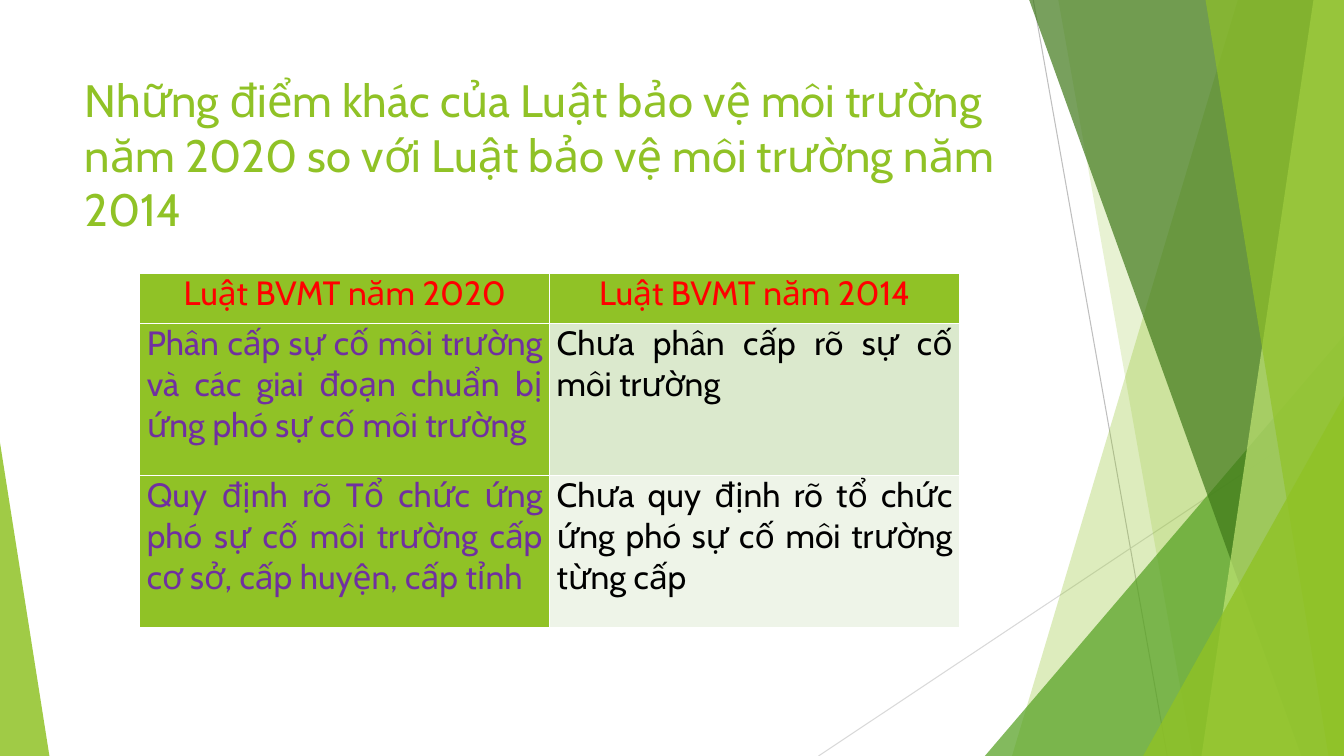
from dataclasses import dataclass

from lxml import etree
from pptx import Presentation
from pptx import util as u
from pptx.dml.color import RGBColor
from pptx.enum import shapes, text
from pptx.oxml import ns

FONT = "Cabin"
GREEN = "90C226"
PURPLE = "7030A0"
RED = "FF0000"
BLACK = "000000"

deck = Presentation()
deck.slide_width, deck.slide_height = u.Inches(13.333), u.Inches(7.5)


@dataclass
class Ray:
    """Thin line between two points, in percent of the slide."""
    start: tuple[float, float]
    end: tuple[float, float]
    colour: str


@dataclass
class Panel:
    """Full-height pane from a slanted left edge to the right slide edge."""
    top: float
    foot: float
    colour: str
    opacity: int


@dataclass
class Wedge:
    """Right triangle standing on the bottom slide edge."""
    left: float
    top: float
    width: float
    apex: float
    colour: str
    opacity: int


@dataclass
class Entry:
    wording: str
    colour: str
    fill: str
    align: text.PP_ALIGN = text.PP_ALIGN.JUSTIFY


def across(percent: float) -> int:
    return round(deck.slide_width * percent / 100)


def down(percent: float) -> int:
    return round(deck.slide_height * percent / 100)


def paint(colour_format, colour: str) -> None:
    colour_format.rgb = RGBColor.from_string(colour)


def tint(shape, colour: str, opacity: int) -> None:
    """Fill a shape with a see-through colour, without line or shadow."""
    shape.shadow.inherit = False
    shape.line.fill.background()
    shape.fill.solid()
    paint(shape.fill.fore_color, colour)
    srgb = shape.fill._xPr.find(".//" + ns.qn("a:srgbClr"))
    etree.SubElement(srgb, ns.qn("a:alpha"), val=str(opacity * 1000))


def draw_ray(slide, ray: Ray) -> None:
    (x1, y1), (x2, y2) = ray.start, ray.end
    line = slide.shapes.add_connector(
        shapes.MSO_CONNECTOR.STRAIGHT, across(x1), down(y1), across(x2), down(y2))
    line.line.width = u.Pt(0.75)
    paint(line.line.color, ray.colour)
    etree.SubElement(line._element.spPr, ns.qn("a:effectLst"))


def draw_panel(slide, panel: Panel) -> None:
    outline = slide.shapes.build_freeform(across(panel.top), 0)
    outline.add_line_segments([
        (across(100), 0), (across(100), down(100)), (across(panel.foot), down(100))])
    tint(outline.convert_to_shape(), panel.colour, panel.opacity)


def draw_wedge(slide, wedge: Wedge) -> None:
    triangle = slide.shapes.add_shape(
        shapes.MSO_SHAPE.ISOSCELES_TRIANGLE, across(wedge.left), down(wedge.top),
        across(wedge.width), down(100 - wedge.top))
    triangle.adjustments[0] = wedge.apex
    tint(triangle, wedge.colour, wedge.opacity)


def write(paragraph, wording: str, size: float, colour: str) -> None:
    run = paragraph.add_run()
    run.text = wording
    run.font.name, run.font.size, run.font.bold = FONT, u.Pt(size), False
    paint(run.font.color, colour)


def write_title(title, wording: str) -> None:
    title.left, title.top = across(5.55), down(8.93)
    title.width, title.height = across(70.5), down(19.2)
    frame = title.text_frame
    frame.word_wrap = True
    frame.auto_size = text.MSO_AUTO_SIZE.NONE
    frame.vertical_anchor = text.MSO_ANCHOR.TOP
    frame.paragraphs[0].alignment = text.PP_ALIGN.LEFT
    write(frame.paragraphs[0], wording, 32.4, GREEN)


def fill_cell(cell, entry: Entry) -> None:
    cell.margin_left = cell.margin_right = u.Inches(0.07)
    cell.margin_top = cell.margin_bottom = 0
    cell.fill.solid()
    paint(cell.fill.fore_color, entry.fill)
    paragraph = cell.text_frame.paragraphs[0]
    paragraph.alignment = entry.align
    paragraph.space_after = u.Pt(6)
    write(paragraph, entry.wording, 24, entry.colour)


def draw_comparison(slide, rows: list[list[Entry]]) -> None:
    column_width, row_heights = 30.5, [6.67, 20.1, 20.1]
    table = slide.shapes.add_table(
        len(rows), len(rows[0]), across(10.4), down(36.1),
        across(column_width * len(rows[0])), down(sum(row_heights))).table
    for column in table.columns:
        column.width = across(column_width)
    for row, height, entries in zip(table.rows, row_heights, rows):
        row.height = down(height)
        for cell, entry in zip(row.cells, entries):
            fill_cell(cell, entry)


BACKDROP = [
    Ray((76.88, 0), (86.85, 100), "BFBFBF"),
    Ray((100, 53.73), (60.9, 100), "D9D9D9"),
    Panel(92.1, 75.3, GREEN, 30),
    Panel(78.75, 88.73, GREEN, 20),
    Wedge(73.28, 44.4, 26.72, 1, "54A021", 72),
    Panel(76.58, 96.83, "3F7819", 70),
    Panel(97.73, 89.4, "C0E474", 70),
    Panel(89.7, 98.85, GREEN, 65),
    Wedge(85.05, 52.4, 14.95, 1, GREEN, 80),
    Wedge(0, 58.53, 3.68, 0, GREEN, 85),
]
DRAWERS = {Ray: draw_ray, Panel: draw_panel, Wedge: draw_wedge}

COMPARISON = [
    [Entry(f"Luật BVMT năm {year}", RED, GREEN, text.PP_ALIGN.CENTER)
     for year in (2020, 2014)],
    [Entry("Phân cấp sự cố môi trường và các giai đoạn chuẩn bị "
           "ứng phó sự cố môi trường", PURPLE, GREEN),
     Entry("Chưa phân cấp rõ sự cố môi trường", BLACK, "DBE9CD")],
    [Entry("Quy định rõ Tổ chức ứng phó sự cố môi trường cấp cơ sở, "
           "cấp huyện, cấp tỉnh", PURPLE, GREEN),
     Entry("Chưa quy định rõ tổ chức ứng phó sự cố môi trường từng cấp",
           BLACK, "EEF4E8")],
]


def main() -> None:
    slide = deck.slides.add_slide(deck.slide_layouts.get_by_name("Title Only"))
    for part in BACKDROP:
        DRAWERS[type(part)](slide, part)
    write_title(slide.shapes.title, "Những điểm khác của Luật bảo vệ môi trường "
                "năm 2020 so với Luật bảo vệ môi trường năm 2014")
    draw_comparison(slide, COMPARISON)
    deck.save("out.pptx")


if __name__ == "__main__":
    main()
